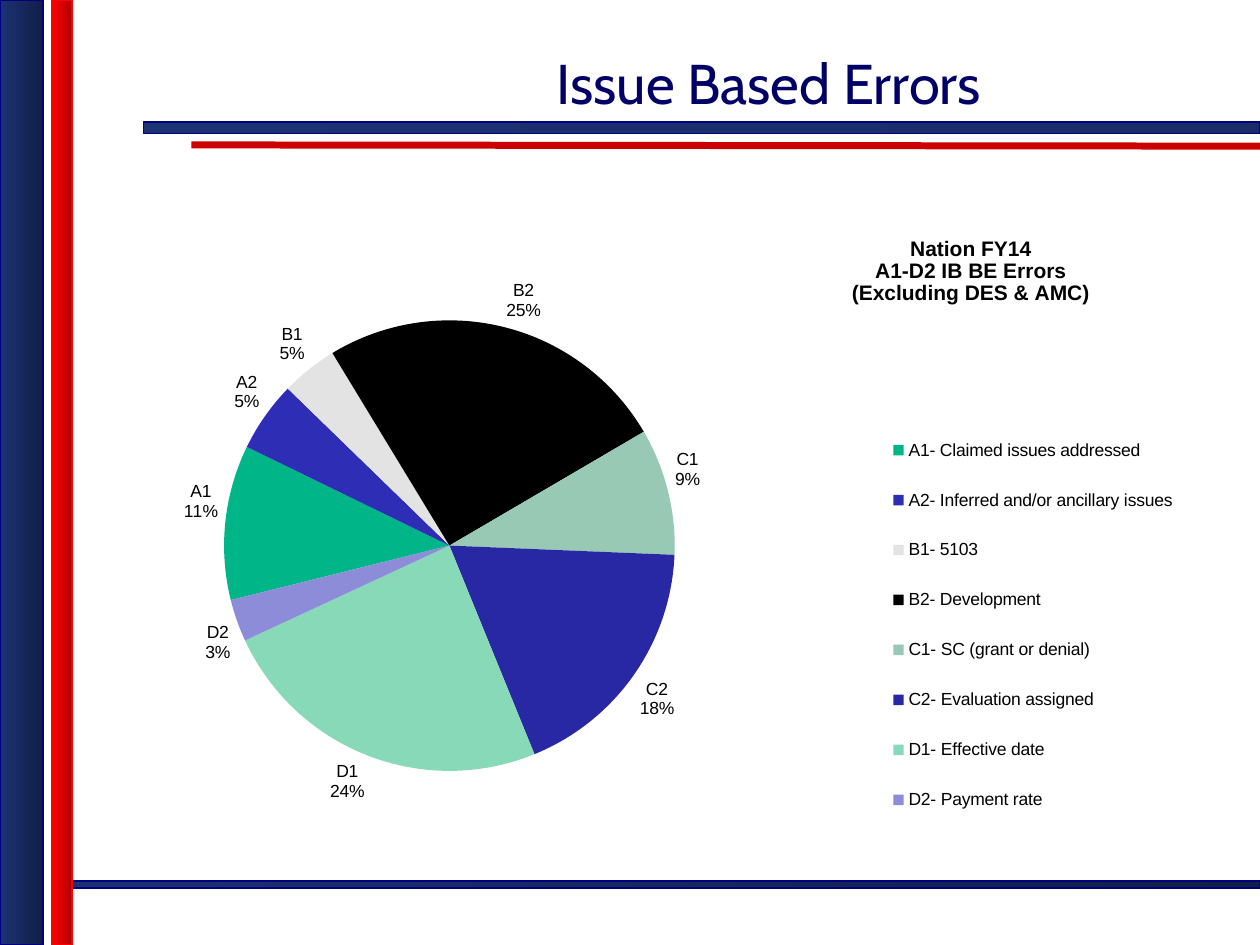
from lxml import etree
from pptx import Presentation
from pptx.chart.data import CategoryChartData
from pptx.dml.color import RGBColor
from pptx.enum.chart import XL_CHART_TYPE, XL_LABEL_POSITION, XL_LEGEND_POSITION
from pptx.enum.shapes import MSO_CONNECTOR, MSO_SHAPE
from pptx.enum.text import MSO_ANCHOR, PP_ALIGN
from pptx.oxml.ns import qn
from pptx.util import Inches, Pt

PIE = XL_CHART_TYPE.PIE
OUTSIDE = XL_LABEL_POSITION.OUTSIDE_END
LEGEND_RIGHT = XL_LEGEND_POSITION.RIGHT
RECTANGLE = MSO_SHAPE.RECTANGLE
STRAIGHT = MSO_CONNECTOR.STRAIGHT
BOTTOM = MSO_ANCHOR.BOTTOM
CENTER = PP_ALIGN.CENTER

NAVY, RED = "000080", "FF0000"
BANDS = [  # left, top, width, height, gradient start, gradient end, line
    (0.46, 6.99, 9.54, 0.06, "1D3275", "111E46", NAVY),
    (1.14, 0.97, 8.86, 0.09, "1D3275", "1A2D69", NAVY),
    (0, 0, 0.34, 7.5, "1D3275", "111E46", NAVY),
    (0.41, 0, 0.16, 7.5, "FF0000", "B20000", RED),
]
CHART_TITLE = "Nation FY14\nA1-D2 IB BE Errors\n(Excluding DES & AMC)"
ERRORS = [  # category, value, shown share, colour
    ("A1- Claimed issues addressed", 11, "11%", "00B588"),
    ("A2- Inferred and/or ancillary issues", 5, "5%", "2D2DB5"),
    ("B1- 5103", 4, "5%", "E3E3E3"),
    ("B2- Development", 25, "25%", "000000"),
    ("C1- SC (grant or denial)", 9, "9%", "98C9B4"),
    ("C2- Evaluation assigned", 18, "18%", "2828A4"),
    ("D1- Effective date", 24, "24%", "88D9B8"),
    ("D2- Payment rate", 3, "3%", "8C8CD9"),
]


def rgb(value):
    return RGBColor.from_string(value)


def set_font(font, color, **values):
    font.color.rgb = rgb(color)
    for name, value in values.items():
        setattr(font, name, value)


def set_layout(element, index, **values):
    """Place a chart part by fractions of the chart area."""
    for old in element.findall(qn("c:layout")):
        element.remove(old)
    layout = etree.Element(qn("c:layout"))
    element.insert(index, layout)
    manual = etree.SubElement(layout, qn("c:manualLayout"))
    for name, value in values.items():
        etree.SubElement(manual, qn(f"c:{name}")).set("val", str(value))


class SlideBuilder:
    """Holds the text style and the current slide."""

    heading = {"name": "Cabin", "size": Pt(32)}
    chart_text = {"name": "Arial", "size": Pt(10), "bold": False}
    chart_heading = {"name": "Arial", "size": Pt(12), "bold": True}

    def __init__(self, slide):
        self.shapes = slide.shapes

    def band(self, left, top, width, height, start, end, line):
        shape = self.shapes.add_shape(
            RECTANGLE, Inches(left), Inches(top), Inches(width), Inches(height))
        shape.shadow.inherit = False
        shape.fill.gradient()
        shape.fill.gradient_angle = 0
        stops = zip(shape.fill.gradient_stops, (start, end), (0, 1))
        for stop, color, position in stops:
            stop.color.rgb = rgb(color)
            stop.position = position
        shape.line.color.rgb = rgb(line)
        shape.line.width = Pt(1)

    def rule(self, x1, y1, x2, y2, color, width):
        connector = self.shapes.add_connector(
            STRAIGHT, Inches(x1), Inches(y1), Inches(x2), Inches(y2))
        connector.line.color.rgb = rgb(color)
        connector.line.width = Pt(width)
        etree.SubElement(connector._element.spPr, qn("a:effectLst"))

    def title(self, text, left, top, width, height):
        box = self.shapes.add_textbox(
            Inches(left), Inches(top), Inches(width), Inches(height))
        frame = box.text_frame
        frame.word_wrap = True
        frame.vertical_anchor = BOTTOM
        paragraph = frame.paragraphs[0]
        paragraph.text = text
        paragraph.alignment = CENTER
        set_font(paragraph.runs[0].font, "000066", **self.heading)

    def chart_lines(self, frame, text, style):
        frame.text = text
        for paragraph in frame.paragraphs:
            set_font(paragraph.font, "000000", **style)
            for run in paragraph.runs:
                set_font(run.font, "000000", **style)

    def pie(self, heading, rows, start_angle, left, top, width, height):
        data = CategoryChartData()
        data.categories = [row[0] for row in rows]
        data.add_series(heading, [row[1] for row in rows])
        chart = self.shapes.add_chart(
            PIE, Inches(left), Inches(top), Inches(width), Inches(height), data).chart
        set_font(chart.font, "000000", **self.chart_text)

        chart.has_title = True
        self.chart_lines(chart.chart_title.text_frame, heading, self.chart_heading)
        chart.chart_title.include_in_layout = False
        set_layout(chart.chart_title._element, 1,
                   xMode="edge", yMode="edge", x=0.65, y=0.03)

        chart.has_legend = True
        chart.legend.position = LEGEND_RIGHT
        chart.legend.include_in_layout = False
        set_font(chart.legend.font, "000000", **self.chart_text)
        set_layout(chart.legend._element, 1, xMode="edge", yMode="edge",
                   x=0.66, y=0.3, w=0.3, h=0.65)

        plot = chart.plots[0]
        plot.vary_by_categories = True
        angle = etree.SubElement(plot._element, qn("c:firstSliceAng"))
        angle.set("val", str(start_angle))
        set_layout(plot._element.getparent(), 0, layoutTarget="inner",
                   xMode="edge", yMode="edge", x=0.11, y=0.09, w=0.39, h=0.83)

        for index, (category, _, share, color) in enumerate(rows):
            point = plot.series[0].points[index]
            point.format.fill.solid()
            point.format.fill.fore_color.rgb = rgb(color)
            point.format.line.fill.background()
            code = category.split("-")[0]
            self.chart_lines(point.data_label.text_frame, f"{code}\n{share}",
                             self.chart_text)
            point.data_label.position = OUTSIDE


def main():
    presentation = Presentation()
    presentation.slide_width = Inches(10)
    presentation.slide_height = Inches(7.5)
    slide = presentation.slides.add_slide(presentation.slide_layouts[6])
    builder = SlideBuilder(slide)
    builder.rule(1.52, 1.15, 10, 1.16, "CC0000", 4)
    for band in BANDS:
        builder.band(*band)
    builder.title("Issue Based Errors", 2.21, 0, 7.79, 0.97)
    builder.pie(CHART_TITLE, ERRORS, 256, 0.77, 1.68, 9.17, 5.25)
    presentation.save("out.pptx")


if __name__ == "__main__":
    main()
